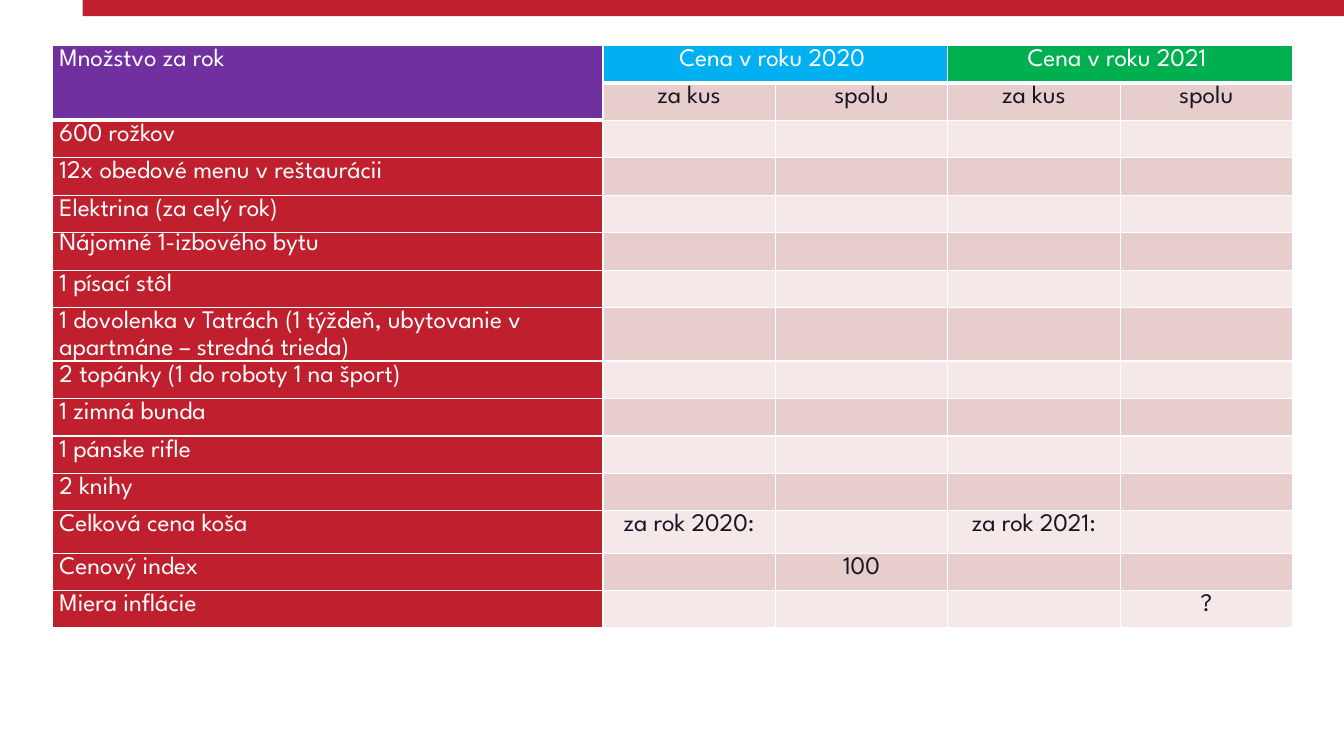
import pptx
import pptx.dml.color
import pptx.enum.shapes
import pptx.enum.text
import pptx.oxml
import pptx.util
from pptx.util import Inches

RGBColor = pptx.dml.color.RGBColor
ALIGN = pptx.enum.text.PP_ALIGN

WHITE = RGBColor(0xFF, 0xFF, 0xFF)
INK = RGBColor(0x17, 0x17, 0x23)
RED = RGBColor(0xC0, 0x20, 0x2E)
PURPLE = RGBColor(0x70, 0x30, 0xA0)
BLUE = RGBColor(0x00, 0xB0, 0xF0)
GREEN = RGBColor(0x00, 0xB0, 0x50)
PINK = RGBColor(0xE8, 0xCD, 0xCD)
PALE = RGBColor(0xF4, 0xE8, 0xE8)

DRAWING = "http://schemas.openxmlformats.org/drawingml/2006/main"
COLUMN_WIDTHS = [5.46] + [1.71] * 4
ROW_HEIGHT = 0.372
TALL_ROWS = {7: 0.53, 12: 0.42}
HOLIDAY = "1 dovolenka v Tatrách (1 týždeň, ubytovanie v apartmáne – stredná trieda)"
RENT = "Nájomné 1-izbového bytu"
BASKET = [
    ["Množstvo za rok", "Cena v roku 2020 ", "", "Cena v roku 2021 ", ""],
    ["", "za kus", "spolu", "za kus", "spolu"],
    ["600 rožkov"],
    ["12x obedové menu v reštaurácii"],
    ["Elektrina (za celý rok) "],
    [RENT],
    ["1 písací stôl"],
    [HOLIDAY],
    ["2 topánky (1 do roboty 1 na šport)"],
    ["1 zimná bunda"],
    ["1 pánske rifle"],
    ["2 knihy"],
    ["Celková cena koša ", "za rok 2020:", "", "za rok 2021:"],
    ["Cenový index", "", "100"],
    ["Miera inflácie", "", "", "", "?"],
]


def apply_format(target, values):
    """Set each named attribute of the target."""
    for name, value in values.items():
        setattr(target, name, value)


def add_top_bar(slide, left, top, width, height):
    """Draw the red band along the top edge."""
    bar = slide.shapes.add_shape(
        pptx.enum.shapes.MSO_SHAPE.RECTANGLE, left, top, width, height)
    bar.shadow.inherit = False
    bar.fill.solid()
    bar.fill.fore_color.rgb = RED
    bar.line.fill.background()


def set_borders(cell, bottom_width):
    """Give a cell white borders with the given bottom width in points."""
    properties = cell._tc.get_or_add_tcPr()
    widths = {"lnL": 1, "lnR": 1, "lnT": 1, "lnB": bottom_width}
    for index, (side, width) in enumerate(widths.items()):
        border = pptx.oxml.parse_xml(
            f'<a:{side} xmlns:a="{DRAWING}" w="{pptx.util.Pt(width)}">'
            f'<a:solidFill><a:srgbClr val="{WHITE}"/></a:solidFill></a:{side}>')
        properties.insert(index, border)


def cell_fill(row, column):
    """Return the fill colour for a place in the table."""
    if column == 0:
        return PURPLE if row < 2 else RED
    if row == 0:
        return BLUE if column < 3 else GREEN
    return PINK if row % 2 else PALE


def write_cell(cell, text, row, column):
    """Fill, border and write one cell."""
    apply_format(cell, {"margin_left": Inches(0.07), "margin_right": Inches(0.07),
                        "margin_top": 0, "margin_bottom": 0})
    cell.fill.solid()
    cell.fill.fore_color.rgb = cell_fill(row, column)
    set_borders(cell, 3 if row == 0 else 1)
    if not text:
        return
    paragraph = cell.text_frame.paragraphs[0]
    if column:
        paragraph.alignment = ALIGN.CENTER
    else:
        paragraph.alignment = ALIGN.LEFT if text in (RENT, HOLIDAY) else ALIGN.JUSTIFY
    if text != RENT:
        paragraph.line_spacing = 1.15
    run = paragraph.add_run()
    run.text = text
    apply_format(run.font, {"name": "League Spartan", "size": pptx.util.Pt(18),
                            "bold": False})
    run.font.color.rgb = WHITE if row == 0 or column == 0 else INK


def add_basket_table(slide, left, top, width, height):
    """Build the consumer basket table."""
    frame = slide.shapes.add_table(
        len(BASKET), len(COLUMN_WIDTHS), left, top, width, height)
    table = frame.table
    apply_format(table, {"first_row": False, "horz_banding": False})
    for column, column_width in zip(table.columns, COLUMN_WIDTHS):
        column.width = Inches(column_width)
    for row, texts in enumerate(BASKET):
        table.rows[row].height = Inches(TALL_ROWS.get(row, ROW_HEIGHT))
        for column in range(len(COLUMN_WIDTHS)):
            text = texts[column] if column < len(texts) else ""
            write_cell(table.cell(row, column), text, row, column)
    table.cell(0, 0).merge(table.cell(1, 0))
    for column in (1, 3):
        table.cell(0, column).merge(table.cell(0, column + 1))


def main():
    """Create and save the presentation."""
    presentation = pptx.Presentation()
    apply_format(presentation, {"slide_width": Inches(13.33),
                                "slide_height": Inches(7.5)})
    slide = presentation.slides.add_slide(presentation.slide_layouts[6])
    add_top_bar(slide, Inches(0.82), 0, Inches(12.51), Inches(0.16))
    add_basket_table(slide, Inches(0.52), Inches(0.45), Inches(12.3), Inches(5.78))
    presentation.save("out.pptx")


if __name__ == "__main__":
    main()
